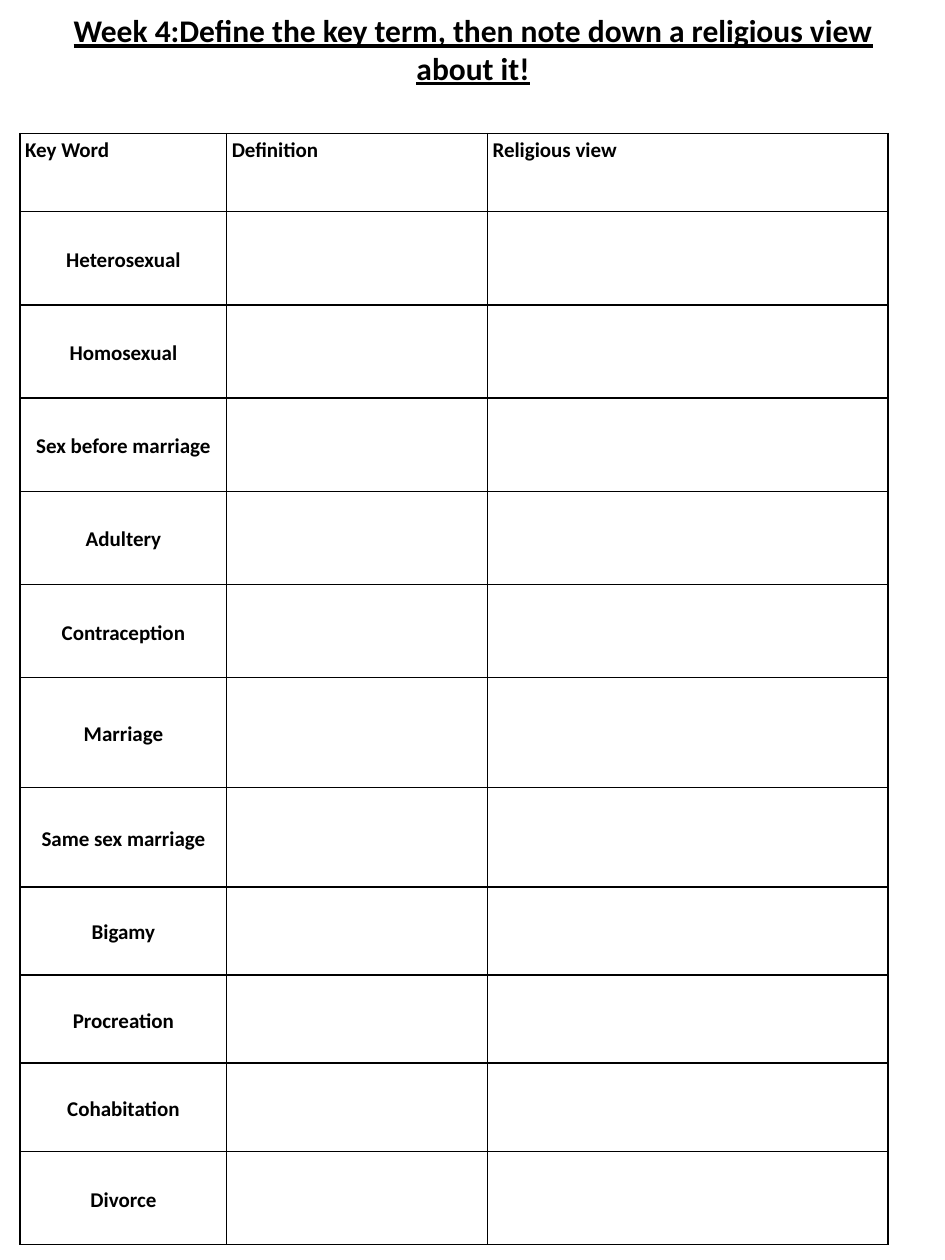
"""Build a key term worksheet with a heading and a table to fill in."""
import pptx
import pptx.dml.color
import pptx.enum.text
import pptx.oxml
import pptx.oxml.ns
import pptx.util

TITLE = "Week 4:Define the key term, then note down a religious view about it!"
HEADS = ["Key Word", "Definition", "Religious view"]
TERMS = [
    ("Heterosexual", 0.74),
    ("Homosexual", 0.74),
    ("Sex before marriage", 0.74),
    ("Adultery", 0.74),
    ("Contraception", 0.74),
    ("Marriage", 0.87),
    ("Same sex marriage", 0.79),
    ("Bigamy", 0.7),
    ("Procreation", 0.7),
    ("Cohabitation", 0.7),
    ("Divorce", 0.74),
]
COLS = [1.64, 2.07, 3.18]
ROWS = [0.62] + [high for _, high in TERMS]
BLACK = pptx.dml.color.RGBColor(0, 0, 0)
ALIGN = pptx.enum.text.PP_ALIGN
ANCHOR = pptx.enum.text.MSO_ANCHOR
INCH = pptx.util.Inches


def style(para, size, align):
    para.alignment = align
    para.font.name = "Calibri"
    para.font.size = pptx.util.Pt(size)
    para.font.bold = True
    para.font.color.rgb = BLACK


def border(cell):
    props = cell._tc.get_or_add_tcPr()
    for place, side in enumerate(("lnL", "lnR", "lnT", "lnB")):
        props.insert(place, pptx.oxml.parse_xml(
            f'<a:{side} {pptx.oxml.ns.nsdecls("a")} w="{pptx.util.Pt(1)}">'
            f'<a:solidFill><a:srgbClr val="{BLACK}"/></a:solidFill></a:{side}>'))


def add_title(slide):
    box = slide.shapes.add_textbox(INCH(0.29), INCH(0.04), INCH(6.93), INCH(0.71))
    frame = box.text_frame
    frame.word_wrap = True
    frame.auto_size = pptx.enum.text.MSO_AUTO_SIZE.SHAPE_TO_FIT_TEXT
    para = frame.paragraphs[0]
    para.text = TITLE
    style(para, 18, ALIGN.CENTER)
    para.font.underline = True


def add_grid(slide):
    words = [HEADS] + [[term, "", ""] for term, _ in TERMS]
    table = slide.shapes.add_table(
        len(ROWS), len(COLS), INCH(0.16), INCH(1.06),
        INCH(sum(COLS)), INCH(sum(ROWS))).table
    table.first_row = table.horz_banding = False
    for col, wide in zip(table.columns, COLS):
        col.width = INCH(wide)
    for index, (row, high) in enumerate(zip(table.rows, ROWS)):
        row.height = INCH(high)
        for cell, word in zip(row.cells, words[index]):
            cell.fill.background()
            border(cell)
            cell.margin_left = cell.margin_right = INCH(0.04)
            cell.margin_top = cell.margin_bottom = 0
            cell.vertical_anchor = ANCHOR.MIDDLE if index else ANCHOR.TOP
            para = cell.text_frame.paragraphs[0]
            para.text = word
            para.line_spacing = 1.15
            style(para, 12, ALIGN.CENTER if index else ALIGN.LEFT)


def main():
    deck = pptx.Presentation()
    deck.slide_width, deck.slide_height = INCH(7.5), INCH(10)
    slide = deck.slides.add_slide(deck.slide_layouts[6])
    add_title(slide)
    add_grid(slide)
    deck.save("out.pptx")


if __name__ == "__main__":
    main()
